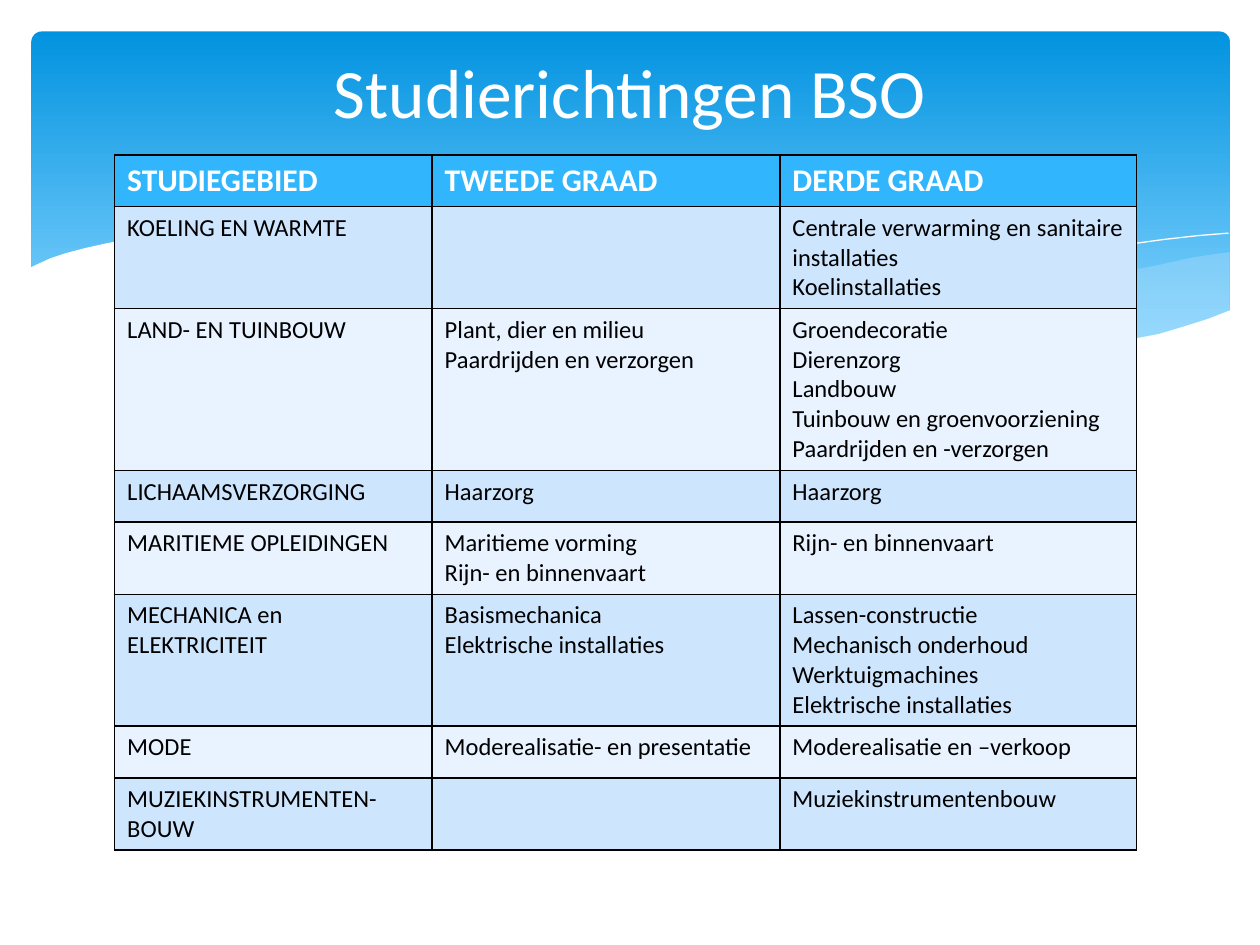
from lxml import etree
from pptx import Presentation
from pptx import util as u
from pptx.dml.color import RGBColor
from pptx.enum import shapes, text
from pptx.oxml import ns

THEME = {
    "font": "Calibri", "title_size": 39.6, "head_size": 18, "body_size": 14,
    "white": "FFFFFF", "black": "000000", "head": "31B6FD",
    "bands": ("CEE5FE", "E8F3FF"), "wave": "C6E7FC",
    "sky": ((0, "0293E0"), (0.9, "83D3FE")),
}

# Content
TITLE = "Studierichtingen BSO"
HEADER = ("STUDIEGEBIED", "TWEEDE GRAAD", "DERDE GRAAD")
ROWS = [
    ("KOELING EN WARMTE", "",
     "Centrale verwarming en sanitaire installaties\nKoelinstallaties"),
    ("LAND- EN TUINBOUW", "Plant, dier en milieu\nPaardrijden en verzorgen",
     "Groendecoratie\nDierenzorg\nLandbouw\nTuinbouw en groenvoorziening\n"
     "Paardrijden en -verzorgen"),
    ("LICHAAMSVERZORGING", "Haarzorg", "Haarzorg"),
    ("MARITIEME OPLEIDINGEN", "Maritieme vorming\nRijn- en binnenvaart",
     "Rijn- en binnenvaart"),
    ("MECHANICA en ELEKTRICITEIT", "Basismechanica\nElektrische installaties",
     "Lassen-constructie\nMechanisch onderhoud\nWerktuigmachines\n"
     "Elektrische installaties"),
    ("MODE", "Moderealisatie- en presentatie", "Moderealisatie en –verkoop"),
    ("MUZIEKINSTRUMENTEN-BOUW", "", "Muziekinstrumentenbouw"),
]
COLUMNS = (2.52, 2.76, 2.83)
ROW_HEIGHT = 0.41

# Wave outlines in inches
RIGHT_WAVE = [
    (9.76, 2), (9.48, 2.04), (9.21, 2.1), (8.91, 2.16), (8.61, 2.23),
    (8.05, 2.37), (7.53, 2.48), (7.06, 2.57), (6.61, 2.65), (6.91, 2.69),
    (7.19, 2.72), (7.45, 2.75), (7.69, 2.77), (8.03, 2.78), (8.35, 2.77),
    (8.63, 2.75), (8.89, 2.72), (9.13, 2.67), (9.35, 2.62), (9.49, 2.57),
    (9.63, 2.52), (9.76, 2.47)]
MIDDLE_WAVE = [
    (8.93, 2.73), (8.66, 2.69), (8.07, 2.6), (7.41, 2.47), (6.68, 2.31),
    (6.29, 2.22), (5.98, 2.14), (5.69, 2.08), (5.41, 2.03), (5.14, 1.98),
    (4.89, 1.94), (4.42, 1.89), (3.99, 1.86), (3.61, 1.85), (3.28, 1.87),
    (2.86, 1.91), (3.23, 1.96), (3.62, 2.03), (4.04, 2.11), (4.49, 2.22),
    (5.3, 2.4), (5.84, 2.52), (6.34, 2.61), (6.8, 2.68), (7.22, 2.74),
    (7.61, 2.77), (7.96, 2.78), (8.28, 2.78), (8.57, 2.77), (8.76, 2.75)]
LONG_LINE = [
    (3.09, 1.95), (3.28, 1.92), (3.53, 1.89), (3.87, 1.87), (4.16, 1.87),
    (4.5, 1.88), (4.89, 1.9), (5.33, 1.94), (5.82, 2), (6.36, 2.08),
    (6.95, 2.19), (7.6, 2.33), (8.31, 2.51), (9.07, 2.72)]
SHORT_LINE = [
    (6.13, 2.57), (6.53, 2.46), (6.95, 2.35), (7.48, 2.23), (8.06, 2.1),
    (8.66, 1.99), (8.95, 1.94), (9.24, 1.9), (9.51, 1.87), (9.75, 1.85)]
WHITE_WAVE = [
    (9.77, 2.46), (9.59, 2.53), (9.4, 2.59), (9.2, 2.65), (8.99, 2.69),
    (8.75, 2.73), (8.5, 2.75), (8.09, 2.77), (7.78, 2.76), (7.44, 2.74),
    (7.08, 2.7), (6.68, 2.65), (6.26, 2.58), (5.79, 2.5), (5.29, 2.39),
    (4.75, 2.27), (4.18, 2.13), (3.65, 2.02), (3.16, 1.94), (2.71, 1.88),
    (2.3, 1.85), (1.93, 1.84), (1.61, 1.84), (1.32, 1.86), (1.06, 1.89),
    (0.85, 1.93), (0.67, 1.97), (0.52, 2.01), (0.4, 2.05), (0.29, 2.1),
    (0.23, 2.13), (0.23, 3.29), (9.77, 3.29)]
# Points, fill, opacity in percent; no fill means an open white line
WAVES = [
    (RIGHT_WAVE, THEME["wave"], 29), (MIDDLE_WAVE, THEME["wave"], 40),
    (LONG_LINE, None, 100), (SHORT_LINE, None, 100),
    (WHITE_WAVE, THEME["white"], 100),
]


def rgb(value):
    return RGBColor.from_string(value)


def paint(fill, color):
    fill.solid()
    fill.fore_color.rgb = rgb(color)


def write(frame, content, size, color, bold=False, align=None):
    for index, line in enumerate(content.split("\n")):
        para = frame.paragraphs[0] if index == 0 else frame.add_paragraph()
        para.alignment = align
        para.font.size = u.Pt(size)
        if not line:
            continue
        span = para.add_run()
        span.text = line
        span.font.name = THEME["font"]
        span.font.size = u.Pt(size)
        span.font.bold = bold
        span.font.color.rgb = rgb(color)


def add_sky(page):
    box = page.shapes.add_shape(
        shapes.MSO_SHAPE.ROUNDED_RECTANGLE,
        *(u.Inches(n) for n in (0.25, 0.25, 9.51, 2.7)))
    box.adjustments[0] = 0.03
    box.shadow.inherit = False
    box.line.fill.background()
    box.fill.gradient()
    box.fill.gradient_angle = 270
    for stop, (position, color) in zip(box.fill.gradient_stops, THEME["sky"]):
        stop.position = position
        stop.color.rgb = rgb(color)


def add_wave(page, points, color, opacity):
    points = [(u.Inches(x), u.Inches(y)) for x, y in points]
    builder = page.shapes.build_freeform(*points[0])
    builder.add_line_segments(points[1:], close=color is not None)
    wave = builder.convert_to_shape()
    wave.shadow.inherit = False
    if color is None:
        wave.fill.background()
        wave.line.color.rgb = rgb(THEME["white"])
        wave.line.width = u.Pt(0)
        return
    wave.line.fill.background()
    paint(wave.fill, color)
    if opacity < 100:
        tint = wave._element.spPr.find(".//" + ns.qn("a:srgbClr"))
        etree.SubElement(tint, ns.qn("a:alpha"), val=str(opacity * 1000))


def add_borders(cell):
    # Borders come before the fill in the cell properties
    props = cell._tc.get_or_add_tcPr()
    for index, side in enumerate(("a:lnL", "a:lnR", "a:lnT", "a:lnB")):
        line = etree.Element(ns.qn(side), w=str(u.Pt(1)))
        solid = etree.SubElement(line, ns.qn("a:solidFill"))
        etree.SubElement(solid, ns.qn("a:srgbClr"), val=THEME["black"])
        props.insert(index, line)


def add_study_table(page):
    rows = [HEADER] + ROWS
    table = page.shapes.add_table(
        len(rows), len(COLUMNS), u.Inches(0.91), u.Inches(1.23),
        u.Inches(sum(COLUMNS)), u.Inches(ROW_HEIGHT * len(rows))).table
    for column, width in zip(table.columns, COLUMNS):
        column.width = u.Inches(width)
    for r, row in enumerate(rows):
        table.rows[r].height = u.Inches(ROW_HEIGHT)
        head = r == 0
        for c, content in enumerate(row):
            cell = table.cell(r, c)
            paint(cell.fill, THEME["head"] if head else THEME["bands"][(r - 1) % 2])
            add_borders(cell)
            write(cell.text_frame, content, bold=head,
                  size=THEME["head_size" if head else "body_size"],
                  color=THEME["white" if head else "black"])


def main():
    deck = Presentation()
    deck.slide_width, deck.slide_height = u.Inches(10), u.Inches(7.5)
    page = deck.slides.add_slide(deck.slide_layouts[5])

    # Backdrop
    add_sky(page)
    for points, color, opacity in WAVES:
        add_wave(page, points, color, opacity)

    add_study_table(page)

    # Title, brought in front of the backdrop
    title = page.shapes.title
    title.left, title.top = u.Inches(0.5), u.Inches(0.37)
    title.width, title.height = u.Inches(9), u.Inches(0.7)
    title.text_frame.vertical_anchor = text.MSO_ANCHOR.MIDDLE
    write(title.text_frame, TITLE, size=THEME["title_size"],
          color=THEME["white"], align=text.PP_ALIGN.CENTER)
    page.shapes._spTree.append(title._element)

    deck.save("out.pptx")


if __name__ == "__main__":
    main()
